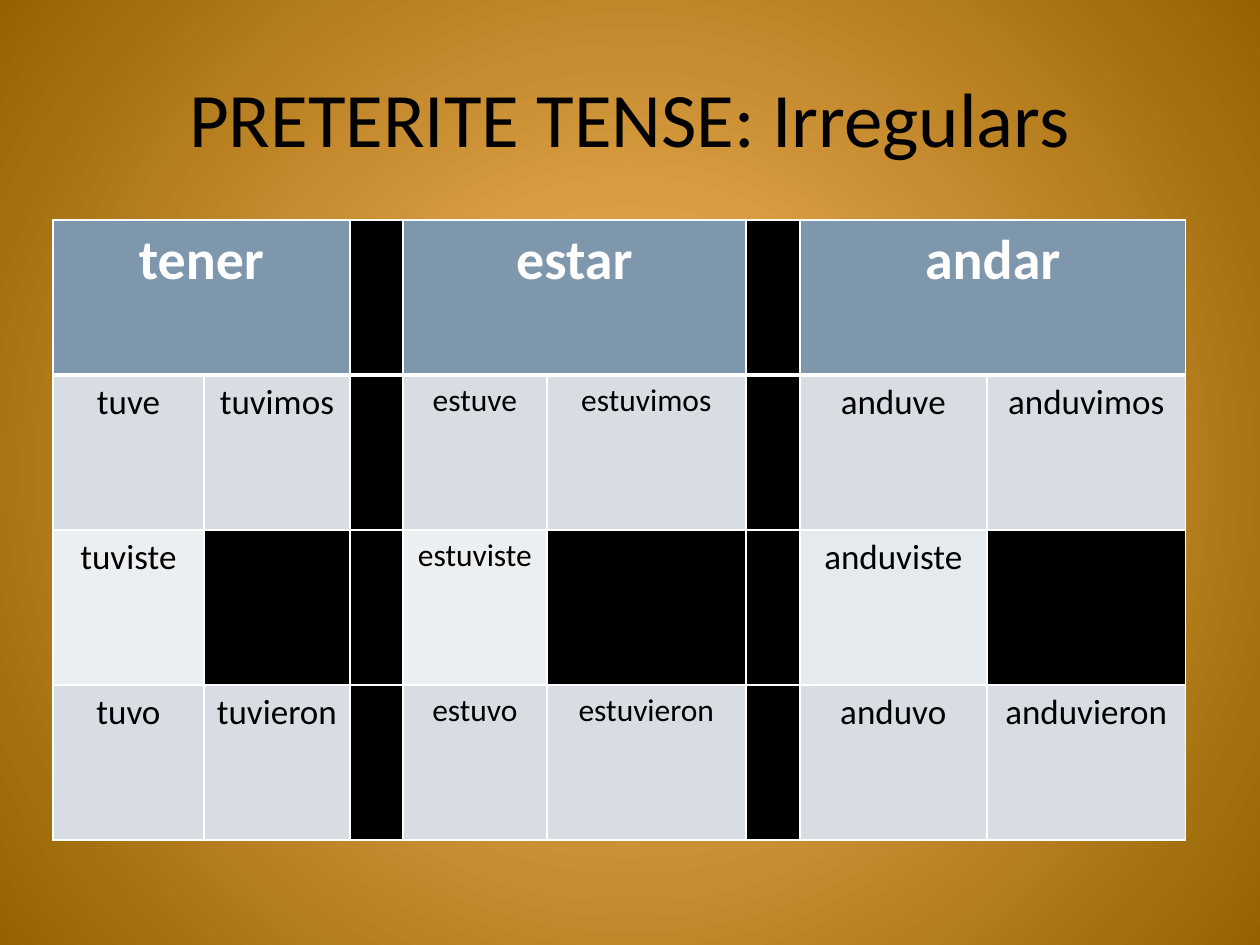
"""Build a slide with a table of irregular Spanish preterite verbs."""
from dataclasses import dataclass
from itertools import product

from lxml.etree import SubElement
from pptx import Presentation
from pptx.dml.color import RGBColor as Rgb
from pptx.enum.text import MSO_ANCHOR as Anchor, PP_ALIGN as Align
from pptx.oxml.ns import qn
from pptx.slide import Slide
from pptx.table import Table, _Cell as Cell
from pptx.text.text import TextFrame
from pptx.util import Emu, Pt

EMU_PER_PX = 914400 / 126


@dataclass(frozen=True)
class Theme:
    font: str = "Calibri"
    glow: str = "FFBA65"
    edge: str = "956400"
    ink: str = "000000"
    light: str = "FFFFFF"
    header: str = "7E97AD"
    band: str = "D8DDE3"
    title_size: int = 44
    header_size: int = 32
    rule: int = 1
    header_rule: int = 3


@dataclass(frozen=True)
class Verb:
    infinitive: str
    singular: tuple[str, str, str]
    plural: tuple[str, str, str]
    size: int
    tu_fill: str
    column: int


THEME = Theme()
VERBS = (
    Verb("tener", ("tuve", "tuviste", "tuvo"),
         ("tuvimos", "", "tuvieron"), 20, "ECEFF1", 0),
    Verb("estar", ("estuve", "estuviste", "estuvo"),
         ("estuvimos", "", "estuvieron"), 18, "ECEFF1", 3),
    Verb("andar", ("anduve", "anduviste", "anduvo"),
         ("anduvimos", "", "anduvieron"), 20, "E5EAEF", 6),
)
COLUMNS = (151, 146, 53, 144, 199, 54, 187, 199)
ROWS = 4
ROW_HEIGHT = 155


def px(length: int) -> Emu:
    return Emu(round(length * EMU_PER_PX))


def paint_background(page: Slide) -> None:
    fill = page.background.fill
    fill.gradient()
    for stop, color in zip(fill.gradient_stops, (THEME.glow, THEME.edge)):
        stop.color.rgb = Rgb.from_string(color)
    gradient = page.element.find(".//" + qn("a:gradFill"))
    gradient.remove(gradient.find(qn("a:lin")))
    path = SubElement(gradient, qn("a:path"), path="circle")
    SubElement(path, qn("a:fillToRect"), l="50000", t="50000", r="50000", b="50000")


def write(frame: TextFrame, text: str, size: int, color: str, bold: bool = False) -> None:
    para = frame.paragraphs[0]
    para.text = text
    para.alignment = Align.CENTER
    para.font.name = THEME.font
    para.font.size = Pt(size)
    para.font.bold = bold
    para.font.color.rgb = Rgb.from_string(color)


def add_title(page: Slide, text: str) -> None:
    box = page.shapes.add_textbox(px(63), px(38), px(1134), px(157))
    box.text_frame.word_wrap = True
    box.text_frame.vertical_anchor = Anchor.MIDDLE
    write(box.text_frame, text, THEME.title_size, THEME.ink)


def draw_borders(cell: Cell, top: int, bottom: int) -> None:
    properties = cell._tc.get_or_add_tcPr()
    widths = {"L": THEME.rule, "R": THEME.rule, "T": top, "B": bottom}
    for side, width in widths.items():
        line = SubElement(properties, qn(f"a:ln{side}"), w=str(Pt(width)))
        solid = SubElement(line, qn("a:solidFill"))
        SubElement(solid, qn("a:srgbClr"), val=THEME.light)


def paint(cell: Cell, color: str) -> None:
    cell.fill.solid()
    cell.fill.fore_color.rgb = Rgb.from_string(color)


def fill_verb(table: Table, verb: Verb) -> None:
    heading = table.cell(0, verb.column)
    heading.merge(table.cell(0, verb.column + 1))
    paint(heading, THEME.header)
    write(heading.text_frame, verb.infinitive, THEME.header_size, THEME.light, True)
    for offset, forms in enumerate((verb.singular, verb.plural)):
        for row, form in enumerate(forms, start=1):
            if form:
                cell = table.cell(row, verb.column + offset)
                paint(cell, verb.tu_fill if row == 2 else THEME.band)
                write(cell.text_frame, form, verb.size, THEME.ink)


def add_verb_table(page: Slide) -> None:
    frame = page.shapes.add_table(ROWS, len(COLUMNS), px(53), px(220),
                                  px(sum(COLUMNS)), px(ROWS * ROW_HEIGHT))
    table = frame.table
    for column, width in zip(table.columns, COLUMNS):
        column.width = px(width)
    for row in table.rows:
        row.height = px(ROW_HEIGHT)
    for row, column in product(range(ROWS), range(len(COLUMNS))):
        cell = table.cell(row, column)
        draw_borders(cell, THEME.header_rule if row == 1 else THEME.rule,
                     THEME.header_rule if row == 0 else THEME.rule)
        paint(cell, THEME.ink)
    for verb in VERBS:
        fill_verb(table, verb)


def main() -> None:
    deck = Presentation()
    deck.slide_width, deck.slide_height = px(1260), px(945)
    page = deck.slides.add_slide(deck.slide_layouts[6])
    paint_background(page)
    add_title(page, "PRETERITE TENSE: Irregulars")
    add_verb_table(page)
    deck.save("out.pptx")


if __name__ == "__main__":
    main()
